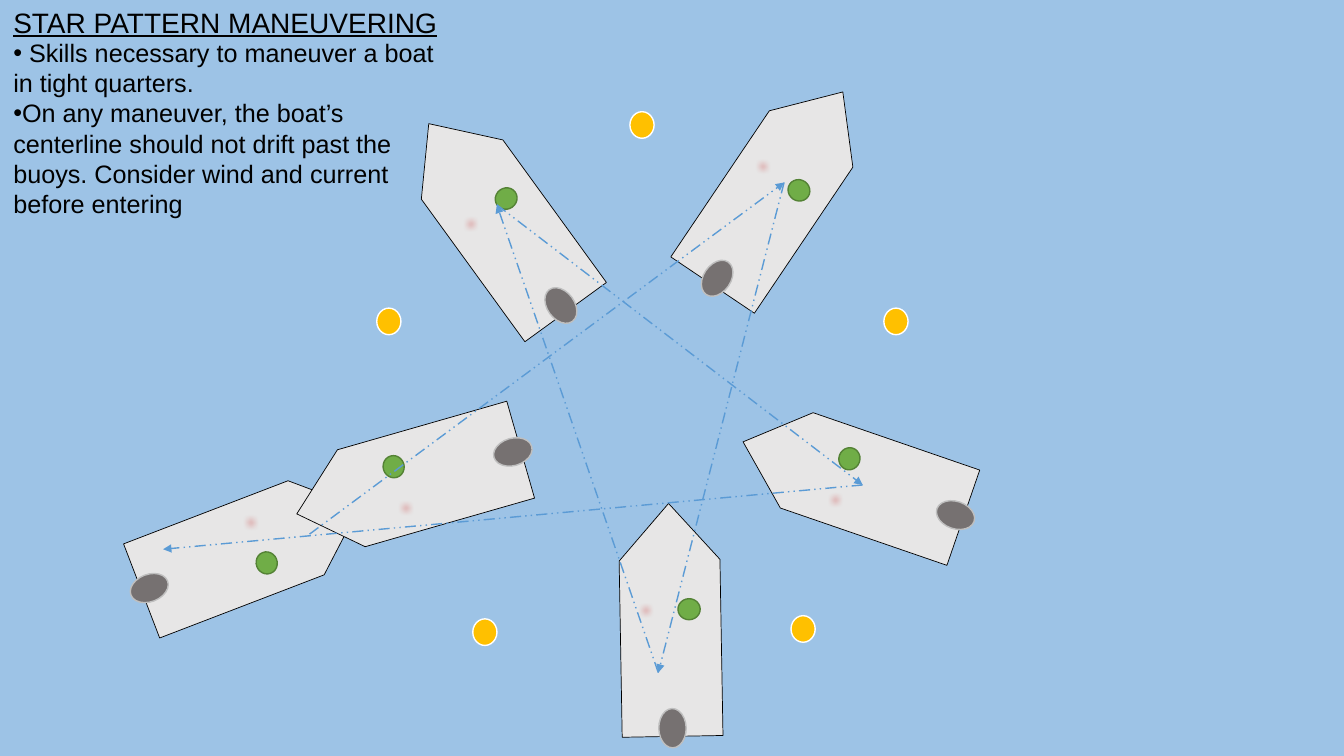
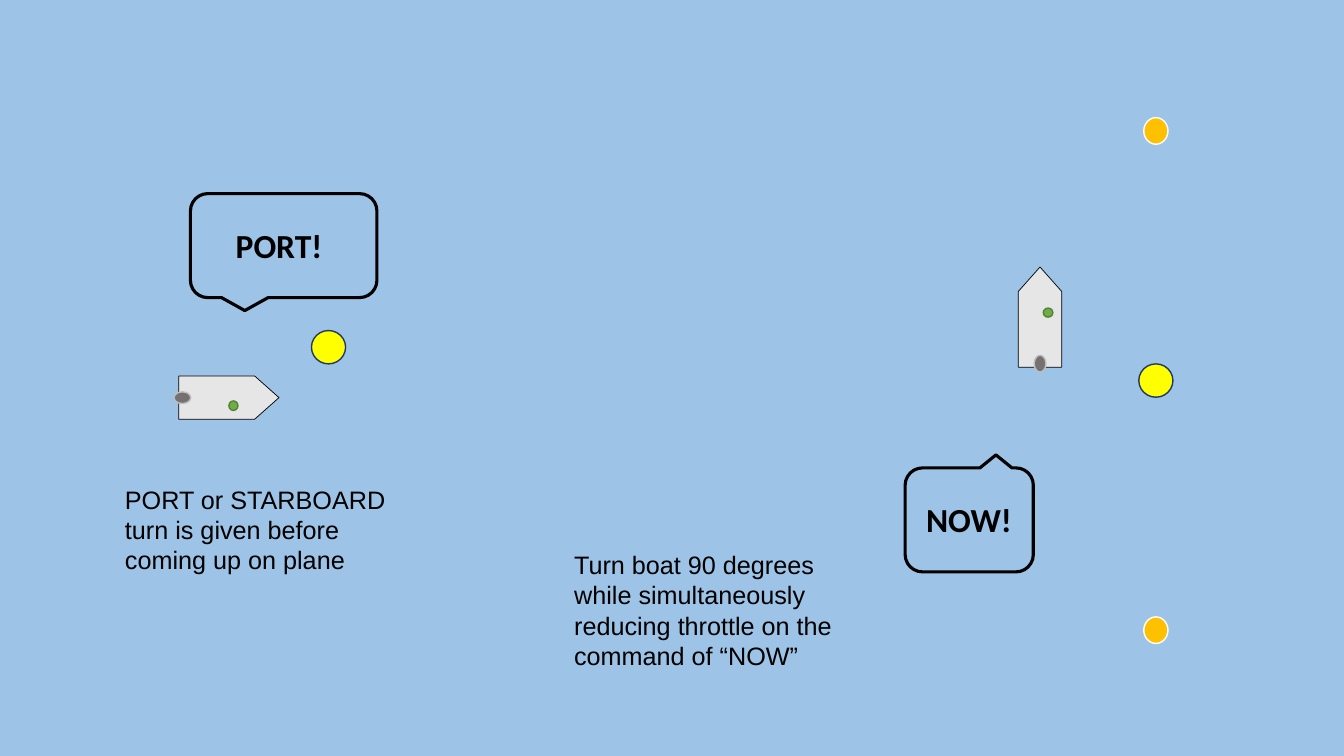
from dataclasses import dataclass
from itertools import pairwise
from math import cos, radians, sin
from typing import NamedTuple

from lxml.etree import SubElement
from pptx import Presentation
from pptx.dml.color import RGBColor as Rgb
from pptx.enum.dml import MSO_LINE_DASH_STYLE as Dash
from pptx.enum.shapes import MSO_CONNECTOR as Link, MSO_SHAPE as Kind
from pptx.enum.text import MSO_ANCHOR as Anchor, MSO_AUTO_SIZE as Fit, PP_ALIGN as Align
from pptx.oxml.ns import qn
from pptx.util import Cm, Pt


@dataclass(frozen=True)
class Theme:
    water: str = "9DC3E6"
    ink: str = "000000"
    hull: str = "E7E6E6"
    red: str = "C00000"
    green: str = "70AD47"
    leaf: str = "548235"
    motor: str = "767171"
    rim: str = "BFBFBF"
    amber: str = "FFC000"
    white: str = "FFFFFF"
    yellow: str = "FFFF00"
    navy: str = "203864"
    route: str = "5B9BD5"
    font: str = "Arial"
    shout: str = "Calibri"
    head: int = 20
    body: int = 18
    loud: int = 24


class Box(NamedTuple):
    """Left, top, width and height in centimetres."""
    x: float
    y: float
    w: float
    h: float


class Boat(NamedTuple):
    """Centre in centimetres, heading clockwise from east, and size factor."""
    x: float
    y: float
    turn: float
    scale: float = 1


class Part(NamedTuple):
    """A fitting, placed from the hull centre of a boat that points up."""
    x: float
    y: float
    w: float
    h: float
    fill: str
    line: str
    soft: bool = False


class Buoy(NamedTuple):
    x: float
    y: float
    mark: bool = False


class Call(NamedTuple):
    text: str
    label: Box
    bubble: Box
    turn: float = 0


T = Theme()
HULL = (5.87, 2.54)
PARTS = (
    Part(-0.62, -0.25, 0.56, 0.53, T.red, T.red, soft=True),
    Part(0.47, -0.26, 0.56, 0.53, T.green, T.leaf),
    Part(0, 2.73, 0.69, 0.99, T.motor, T.rim),
)

STAR_BUOYS = (Buoy(16.18, 3.15), Buoy(22.58, 8.1), Buoy(9.8, 8.1),
              Buoy(20.24, 15.85), Buoy(12.22, 15.93))
STAR_BOATS = (Boat(6.31, 13.84, 339), Boat(19.6, 4.75, 304), Boat(16.9, 15.62, 269),
              Boat(12.53, 5.49, 234), Boat(21.5, 12.09, 199), Boat(10.3, 12.14, 164))
ROUTE = ((7.8, 13.46), (19.76, 4.6), (16.59, 16.95),
         (12.52, 5.16), (21.74, 12.22), (4.11, 13.84))

TURN_BUOYS = (Buoy(29.13, 3.3), Buoy(29.13, 15.88),
              Buoy(29.13, 9.59, mark=True), Buoy(8.28, 8.75, mark=True))
TURN_BOATS = (Boat(5.77, 10.02, 0, 0.43), Boat(26.21, 7.99, 270, 0.43))
CALLS = (
    Call("PORT!", Box(5.69, 5.54, 2.9, 1.27), Box(4.8, 4.88, 4.7, 2.62)),
    Call("NOW!", Box(23.09, 12.45, 3.43, 1.27), Box(22.81, 11.79, 3.23, 2.62), 180),
)
NOTES = (
    ("Turn boat 90 degrees while simultaneously reducing throttle on the command of “NOW”",
     Box(14.22, 13.72, 7.44, 3.33)),
    ("PORT or STARBOARD turn is given before coming up on plane",
     Box(2.9, 12.07, 7.44, 2.57)),
)
SKILLS = (
    " Skills necessary to maneuver a boat in tight quarters.\n"
    "On any maneuver, the boat’s centerline should not drift past the buoys. "
    "Consider wind and current before entering"
)


def write(shape, text: str, *, size: int = T.body, font: str = T.font,
          bold: bool = False, under: bool = False, bullet: bool = False) -> None:
    """Fill a shape with one paragraph for each line of text."""
    frame = shape.text_frame
    frame.text = text
    frame.word_wrap = True
    frame.auto_size = Fit.NONE
    frame.vertical_anchor = Anchor.TOP
    for para in frame.paragraphs:
        para.alignment = Align.LEFT
        para.line_spacing = 1.0
        para.space_before = para.space_after = Pt(0)
        style = para.runs[0].font
        style.name, style.size = font, Pt(size)
        style.bold, style.underline = bold, under
        style.color.rgb = Rgb.from_string(T.ink)
        if bullet:
            props = para._p.get_or_add_pPr()
            props.set("marL", "0")
            props.set("indent", "0")
            SubElement(props, qn("a:buFont"), typeface=T.font)
            SubElement(props, qn("a:buChar"), char="•")


def place(shape, box: Box) -> None:
    shape.left, shape.top, shape.width, shape.height = map(Cm, box)


def label(slide, box: Box, text: str, **style) -> None:
    write(slide.shapes.add_textbox(*map(Cm, box)), text, **style)


def draw(shapes, kind: Kind, x: float, y: float, w: float, h: float, *,
         fill: str | None, line: str, width: float = 1, turn: float = 0):
    """Add a preset shape around its centre."""
    shape = shapes.add_shape(kind, Cm(x - w / 2), Cm(y - h / 2), Cm(w), Cm(h))
    shape.rotation = turn % 360
    shape.shadow.inherit = False
    if fill:
        shape.fill.solid()
        shape.fill.fore_color.rgb = Rgb.from_string(fill)
    else:
        shape.fill.background()
    shape.line.color.rgb = Rgb.from_string(line)
    shape.line.width = Pt(width)
    return shape


def add_boat(slide, boat: Boat) -> None:
    shapes = slide.shapes.add_group_shape().shapes
    w, h = (side * boat.scale for side in HULL)
    hull = draw(shapes, Kind.PENTAGON, boat.x, boat.y, w, h,
                fill=T.hull, line=T.ink, width=0.5, turn=boat.turn)
    hull.adjustments[0] = 0.563
    turn = boat.turn + 90
    c, s = cos(radians(turn)), sin(radians(turn))
    for part in PARTS:
        dx = (part.x * c - part.y * s) * boat.scale
        dy = (part.x * s + part.y * c) * boat.scale
        item = draw(shapes, Kind.OVAL, boat.x + dx, boat.y + dy,
                    part.w * boat.scale, part.h * boat.scale,
                    fill=part.fill, line=part.line, turn=turn)
        if part.soft:
            effects = item._element.spPr.find(qn("a:effectLst"))
            SubElement(effects, qn("a:softEdge"), rad=str(int(Pt(5))))


def add_buoy(slide, buoy: Buoy) -> None:
    w, h, fill, line = ((0.86, 0.84, T.yellow, T.navy) if buoy.mark
                        else (0.61, 0.67, T.amber, T.white))
    draw(slide.shapes, Kind.OVAL, buoy.x, buoy.y, w, h, fill=fill, line=line)


def add_leg(slide, start: tuple[float, float], end: tuple[float, float]) -> None:
    """Draw one dashed arrow of the route."""
    leg = slide.shapes.add_connector(Link.STRAIGHT, *map(Cm, start + end))
    leg.line.color.rgb = Rgb.from_string(T.route)
    leg.line.width = Pt(1)
    leg.line.dash_style = Dash.DASH_DOT_DOT
    props = leg._element.spPr
    SubElement(props.find(qn("a:ln")), qn("a:tailEnd"), type="triangle")
    SubElement(props, qn("a:effectLst"))


def add_call(slide, call: Call) -> None:
    label(slide, call.label, call.text, size=T.loud, font=T.shout, bold=True)
    x, y, w, h = call.bubble
    draw(slide.shapes, Kind.ROUNDED_RECTANGULAR_CALLOUT, x + w / 2, y + h / 2, w, h,
         fill=None, line=T.ink, width=2.25, turn=call.turn)


def add_scene(slide, buoys: tuple[Buoy, ...], boats: tuple[Boat, ...]) -> None:
    for buoy in buoys:
        add_buoy(slide, buoy)
    for boat in boats:
        add_boat(slide, boat)


def star_slide(deck) -> None:
    slide = deck.slides.add_slide(deck.slide_layouts[1])
    title, body = slide.placeholders
    place(title, Box(0.08, 0, 11.33, 1.02))
    write(title, "STAR PATTERN MANEUVERING", size=T.head, under=True)
    place(body, Box(0.08, 0.81, 11.33, 4.93))
    write(body, SKILLS, bullet=True)
    add_scene(slide, STAR_BUOYS, STAR_BOATS)
    for start, end in pairwise(ROUTE):
        add_leg(slide, start, end)


def turn_slide(deck) -> None:
    slide = deck.slides.add_slide(deck.slide_layouts[6])
    add_scene(slide, TURN_BUOYS, TURN_BOATS)
    for call in CALLS:
        add_call(slide, call)
    for text, box in NOTES:
        label(slide, box, text)


def main() -> None:
    deck = Presentation()
    deck.slide_width, deck.slide_height = Cm(33.87), Cm(19.05)
    water = deck.slide_master.background.fill
    water.solid()
    water.fore_color.rgb = Rgb.from_string(T.water)
    star_slide(deck)
    turn_slide(deck)
    deck.save("out.pptx")


if __name__ == "__main__":
    main()
